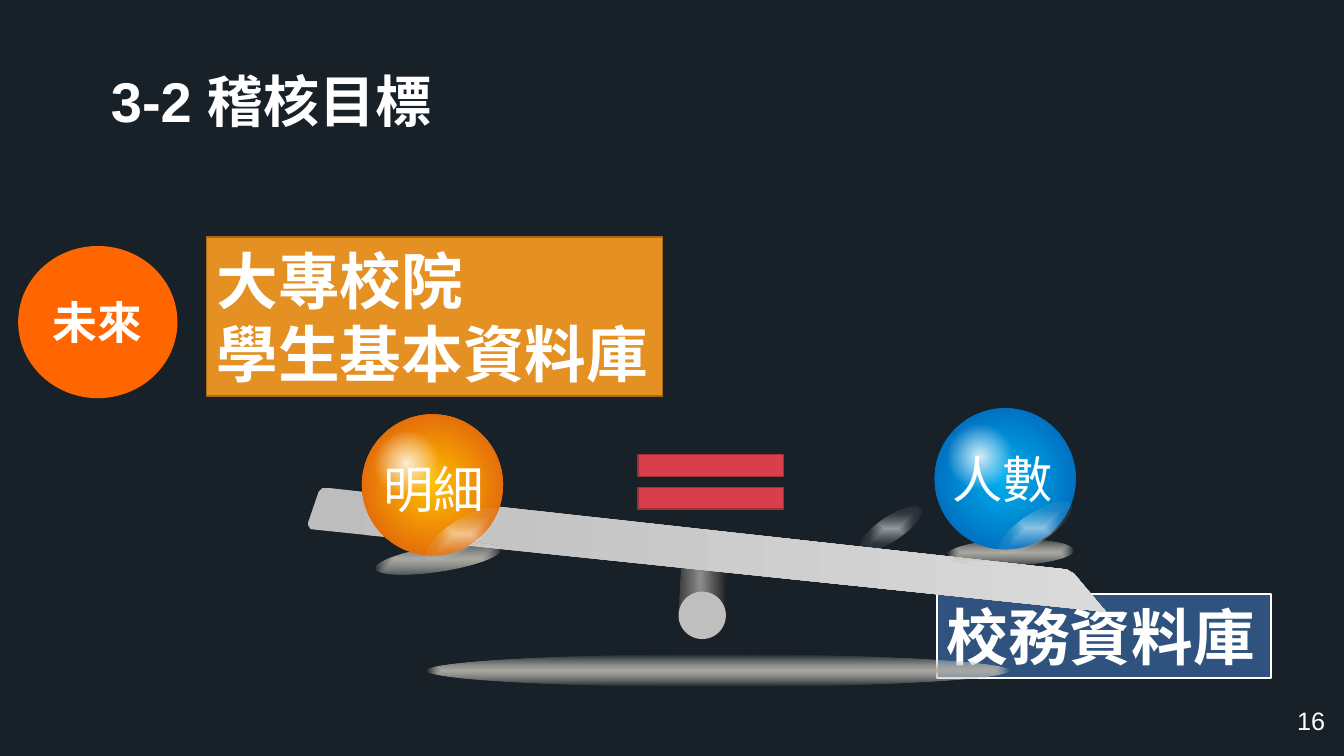
"""Build the audit goal slide with a seesaw that weighs two databases."""
from dataclasses import dataclass

from lxml import etree
from pptx import Presentation
from pptx import util as u
from pptx.dml.color import RGBColor
from pptx.enum import shapes, text
from pptx.oxml import ns

KIND = shapes.MSO_SHAPE
ALIGN = text.PP_ALIGN
ANCHOR = text.MSO_ANCHOR


@dataclass(frozen=True)
class Theme:
    latin: str = "Arial"
    cjk: str = "Noto Sans CJK SC"
    back: str = "182028"
    white: str = "FFFFFF"
    navy: str = "2F537E"
    amber: str = "E49022"
    amber_edge: str = "A96B19"
    orange: str = "FF6600"
    red: str = "D93E4D"
    red_edge: str = "A12E39"
    pivot: str = "BFBFBF"
    shade: tuple = ((0, "AAA9A1", 100), (100, "EEECE1", 0))
    glint: tuple = ((0, "FFFFFF", 55), (50, "D7D7D7", 12), (100, "FFFFFF", 0))
    shine: tuple = ((0, "FFFFFF", 83), (50, "FFFFFF", 0), (100, "FFFFFF", 0))
    gold_ball: tuple = ((0, "FFC000", 100), (65, "E46C0A", 100), (100, "E46C0A", 100))
    blue_ball: tuple = ((0, "00B0F0", 100), (65, "0070C0", 100), (100, "0070C0", 100))
    beam: tuple = ((0, "BDBDBD", 100), (100, "DADADA", 100))
    post: tuple = ((0, "3C3C3C", 100), (45, "8C8C8C", 100), (100, "1E1E1E", 100))
    label_size: int = 44
    title_size: int = 40
    ball_size: int = 36
    badge_size: int = 32
    number_size: int = 18


def rgb(value):
    return RGBColor.from_string(value)


def write(tf, lines, size, font, color, bold=False, align=ALIGN.LEFT,
          anchor=ANCHOR.TOP, spacing=None, wrap=True, east=Theme.cjk):
    tf.word_wrap = wrap
    tf.vertical_anchor = anchor
    for i, line in enumerate(lines):
        p = tf.paragraphs[0] if i == 0 else tf.add_paragraph()
        p.alignment = align
        if spacing:
            p.line_spacing = u.Pt(spacing)
        r = p.add_run()
        r.text = line
        r.font.size = u.Pt(size)
        r.font.bold = bold
        r.font.name = font
        r.font.color.rgb = rgb(color)
        ea = etree.SubElement(r._r.get_or_add_rPr(), ns.qn("a:ea"))
        ea.set("typeface", east)


def gradient(sp, stops, path=None):
    sp.fill.gradient()
    grad = sp._element.spPr.find(ns.qn("a:gradFill"))
    for child in list(grad):
        grad.remove(child)
    gs_list = etree.SubElement(grad, ns.qn("a:gsLst"))
    for pos, color, alpha in stops:
        gs = etree.SubElement(gs_list, ns.qn("a:gs"), pos=str(pos * 1000))
        clr = etree.SubElement(gs, ns.qn("a:srgbClr"), val=color)
        if alpha < 100:
            etree.SubElement(clr, ns.qn("a:alpha"), val=str(alpha * 1000))
    if path:
        node = etree.SubElement(grad, ns.qn("a:path"), path=path)
        sides = dict.fromkeys("ltrb", "50000")
        etree.SubElement(node, ns.qn("a:fillToRect"), **sides)
    else:
        etree.SubElement(grad, ns.qn("a:lin"), ang="0", scaled="0")


class Deck:
    def __init__(self, theme):
        self.theme = theme
        self.prs = Presentation()
        self.prs.slide_width = u.Inches(13.33)
        self.prs.slide_height = u.Inches(7.5)
        self.s = self.prs.slides.add_slide(self.prs.slide_layouts[5])
        self.s.background.fill.solid()
        self.s.background.fill.fore_color.rgb = rgb(theme.back)

    def paint(self, sp, fill, path=None, edge=None, width=1):
        sp.shadow.inherit = False
        if isinstance(fill, str):
            sp.fill.solid()
            sp.fill.fore_color.rgb = rgb(fill)
        else:
            gradient(sp, fill, path)
        if edge:
            sp.line.color.rgb = rgb(edge)
            sp.line.width = u.Pt(width)
        else:
            sp.line.fill.background()
        return sp

    def shape(self, kind, at, fill, rot=0, **look):
        sp = self.s.shapes.add_shape(kind, *map(u.Inches, at))
        sp.rotation = rot
        return self.paint(sp, fill, **look)

    def oval(self, at, fill, rot=0, path="shape"):
        return self.shape(KIND.OVAL, at, fill, rot, path=path)

    def outline(self, points, fill):
        start, *rest = [(u.Inches(x), u.Inches(y)) for x, y in points]
        fb = self.s.shapes.build_freeform(*start)
        fb.add_line_segments(rest)
        return self.paint(fb.convert_to_shape(), fill)

    def text(self, at, line, size, font, **form):
        tb = self.s.shapes.add_textbox(*map(u.Inches, at))
        write(tb.text_frame, [line], size, font, self.theme.white, **form)

    def title(self, at, line):
        t = self.theme
        sp = self.s.shapes.title
        sp.left, sp.top, sp.width, sp.height = map(u.Inches, at)
        write(sp.text_frame, [line], t.title_size, t.latin, t.white, bold=True, spacing=40)
        sp.text_frame.auto_size = text.MSO_AUTO_SIZE.NONE

    def label(self, at, lines, fill, edge, width):
        t = self.theme
        sp = self.shape(KIND.RECTANGLE, at, fill, edge=edge, width=width)
        write(sp.text_frame, lines, t.label_size, t.cjk, t.white, bold=True,
              anchor=ANCHOR.MIDDLE, spacing=52, wrap=False)

    def ball(self, x, y, fill, ground_rot):
        t = self.theme
        tilt, slant = 351.5, 326.9
        self.oval((x + 0.13, y + 1.31, 1.25, 0.25), t.shade, ground_rot)
        self.oval((x, y, 1.4, 1.4), fill, tilt, "circle")
        self.oval((x + 0.01, y + 0.12, 0.88, 0.73), t.shine, tilt, "circle")
        self.oval((x + 0.57, y + 1.04, 0.85, 0.29), t.glint, slant)

    def seesaw(self):
        t = self.theme
        self.oval((4.23, 6.49, 5.78, 0.32), t.shade)
        self.outline([(6.76, 5.6), (7.19, 5.6), (7.21, 6.1), (6.73, 6.1)], t.post)
        self.oval((6.73, 5.87, 0.47, 0.47), t.pivot)
        self.outline([(3.2, 4.84), (3.25, 4.84), (10.58, 5.65), (10.65, 5.69),
                      (10.97, 6.07), (3.08, 5.25), (3.05, 5.2), (3.16, 4.88)], t.beam)
        self.oval((8.49, 5.12, 0.7, 0.24), t.glint, 326.9)
        self.ball(3.59, 4.11, t.gold_ball, 351.5)
        self.ball(9.27, 4.05, t.blue_ball, 358.1)
        for at, word in (((3.6, 4.5, 1.4, 0.71), "明細"), ((9.34, 4.4, 1.21, 0.71), "人數")):
            self.text(at, word, t.ball_size, t.cjk, align=ALIGN.CENTER, spacing=43)


def main():
    t = Theme()
    d = Deck(t)
    d.title((1, 0.72, 9.68, 0.66), "3-2 稽核目標")
    d.label((9.29, 5.89, 3.32, 0.84), ["校務資料庫"], t.navy, t.white, 1.5)
    d.seesaw()
    d.label((2.05, 2.35, 4.52, 1.58), ["大專校院", "學生基本資料庫"], t.amber, t.amber_edge, 1)
    badge = d.oval((0.18, 2.44, 1.58, 1.51), t.orange)
    write(badge.text_frame, ["未來"], t.badge_size, t.latin, t.white, bold=True,
          align=ALIGN.CENTER, anchor=ANCHOR.MIDDLE)
    d.shape(KIND.MATH_EQUAL, (6.07, 4.32, 1.96, 0.92), t.red, edge=t.red_edge)
    d.text((10.24, 6.95, 3, 0.4), "16", t.number_size, t.latin, align=ALIGN.RIGHT)
    d.prs.save("out.pptx")


if __name__ == "__main__":
    main()
